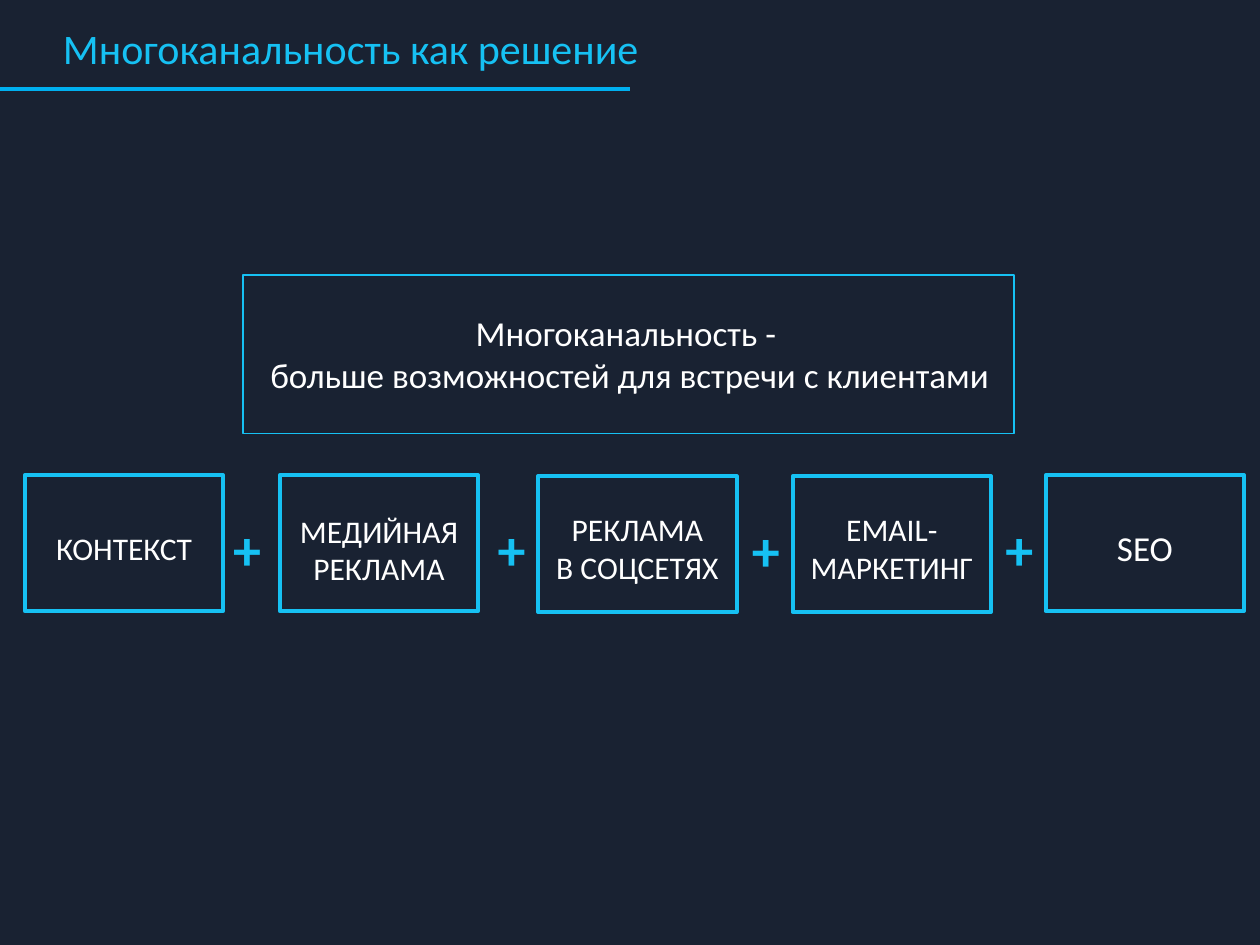
"""Build the slide presenting multichannel marketing as a solution."""
from dataclasses import dataclass

import pptx
import pptx.dml.color
import pptx.enum.shapes
import pptx.enum.text
import pptx.oxml
import pptx.util
from pptx.util import Cm

NAVY = pptx.dml.color.RGBColor(0x19, 0x22, 0x32)
CYAN = pptx.dml.color.RGBColor(0x16, 0xC1, 0xF3)
BLUE = pptx.dml.color.RGBColor(0x00, 0xB0, 0xF0)
WHITE = pptx.dml.color.RGBColor(0xFF, 0xFF, 0xFF)
LEFT = pptx.enum.text.PP_ALIGN.LEFT
CENTER = pptx.enum.text.PP_ALIGN.CENTER
RECTANGLE = pptx.enum.shapes.MSO_SHAPE.RECTANGLE
PAGE_WIDTH, PAGE_HEIGHT = 25.4, 19.05
FRAME_WIDTH, FRAME_HEIGHT = 4, 2.74


@dataclass(frozen=True)
class Area:
    left: float
    top: float
    width: float
    height: float

    def lengths(self) -> tuple:
        return Cm(self.left), Cm(self.top), Cm(self.width), Cm(self.height)


@dataclass(frozen=True)
class Label:
    text: str
    area: Area
    size: int
    color: pptx.dml.color.RGBColor = WHITE
    align: int = CENTER
    bold: bool = False
    wrap: bool = False


@dataclass(frozen=True)
class Channel:
    name: str
    left: float
    top: float
    text_top: float
    text_width: float
    text_height: float
    size: int = 18


CHANNELS = (
    Channel("КОНТЕКСТ", 0.5, 9.58, 10.54, 3.28, 1.02),
    Channel("МЕДИЙНАЯ\nРЕКЛАМА", 5.64, 9.58, 10.19, 3.73, 1.8),
    Channel("РЕКЛАМА\nВ СОЦСЕТЯХ", 10.85, 9.6, 10.16, 3.81, 1.8),
    Channel("EMAIL-\nМАРКЕТИНГ", 15.98, 9.6, 10.16, 3.81, 1.8),
    Channel("SEO", 21.08, 9.58, 10.49, 1.65, 1.12, 20),
)
PLUS_CORNERS = ((4.45, 10.24), (9.78, 10.24), (14.91, 10.26), (20.02, 10.24))


def add_label(page, label: Label) -> None:
    box = page.shapes.add_textbox(*label.area.lengths())
    frame = box.text_frame
    frame.word_wrap = label.wrap
    frame.auto_size = pptx.enum.text.MSO_AUTO_SIZE.SHAPE_TO_FIT_TEXT
    frame.text = label.text
    for paragraph in frame.paragraphs:
        paragraph.alignment = label.align
        for span in paragraph.runs:
            span.font.name = "Calibri"
            span.font.size = pptx.util.Pt(label.size)
            span.font.bold = label.bold
            span.font.color.rgb = label.color


def add_frame(page, area: Area, thickness: float) -> None:
    frame = page.shapes.add_shape(RECTANGLE, *area.lengths())
    frame.shadow.inherit = False
    frame.fill.background()
    frame.line.color.rgb = CYAN
    frame.line.width = pptx.util.Pt(thickness)


def add_backdrop(page) -> None:
    area = Area(0, 0, PAGE_WIDTH, PAGE_HEIGHT)
    backdrop = page.shapes.add_shape(RECTANGLE, *area.lengths())
    backdrop.shadow.inherit = False
    backdrop.fill.solid()
    backdrop.fill.fore_color.rgb = NAVY
    backdrop.line.fill.background()


def add_heading_rule(page) -> None:
    rule = page.shapes.add_connector(
        pptx.enum.shapes.MSO_CONNECTOR.STRAIGHT, Cm(0), Cm(1.8), Cm(12.7), Cm(1.8)
    )
    rule.line.color.rgb = BLUE
    rule.line.width = pptx.util.Pt(2.25)
    properties = rule._element.spPr
    properties.append(properties.makeelement(pptx.oxml.ns.qn("a:effectLst"), {}))


def add_channel(page, channel: Channel) -> None:
    add_frame(page, Area(channel.left, channel.top, FRAME_WIDTH, FRAME_HEIGHT), 2.25)
    text_left = channel.left + (FRAME_WIDTH - channel.text_width) / 2
    area = Area(text_left, channel.text_top, channel.text_width, channel.text_height)
    add_label(page, Label(channel.name, area, channel.size))


def main() -> None:
    deck = pptx.Presentation()
    deck.slide_width, deck.slide_height = Cm(PAGE_WIDTH), Cm(PAGE_HEIGHT)
    page = deck.slides.add_slide(deck.slide_layouts[6])
    add_backdrop(page)
    add_label(page, Label("Многоканальность как решение", Area(1.02, 0.33, 18, 1.27),
                          24, CYAN, LEFT, wrap=True))
    add_heading_rule(page)
    add_label(page, Label("Многоканальность - \nбольше возможностей для встречи с клиентами",
                          Area(0, 6.15, PAGE_WIDTH, 1.96), 20, wrap=True))
    add_frame(page, Area(4.9, 5.54, 15.54, 3.2), 1)
    for channel in CHANNELS:
        add_channel(page, channel)
    for left, top in PLUS_CORNERS:
        add_label(page, Label("+", Area(left, top, 1.09, 1.63), 32, CYAN, LEFT, bold=True))
    deck.save("out.pptx")


if __name__ == "__main__":
    main()
